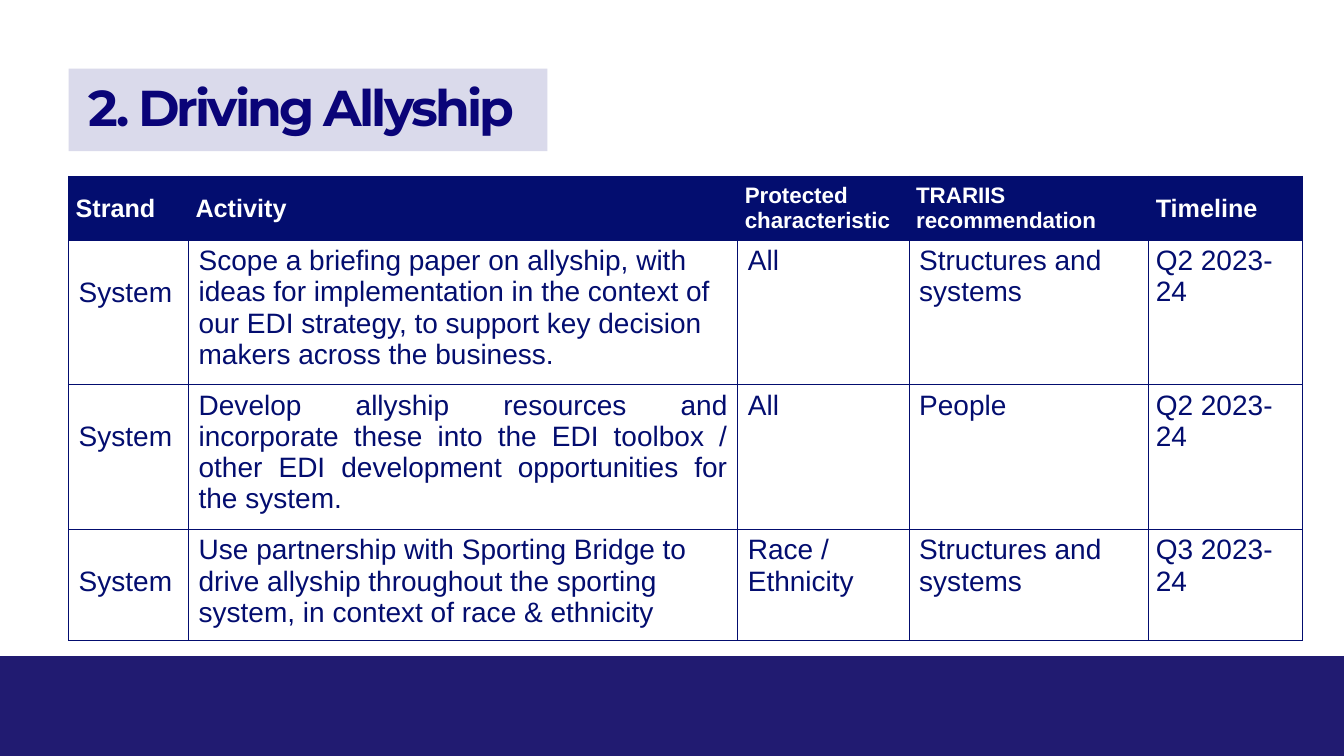
from lxml.etree import SubElement as Sub
from pptx import Presentation
from pptx.dml.color import RGBColor as RGB
from pptx.enum.shapes import MSO_SHAPE as SHAPE
from pptx.enum.text import MSO_ANCHOR as ANCHOR, PP_ALIGN as ALIGN
from pptx.oxml.ns import qn
from pptx.util import Pt

NAVY = RGB(0x03, 0x0D, 0x6F)
INK = RGB(0x0A, 0x04, 0x78)
BAND = RGB(0x21, 0x1B, 0x71)
LILAC = RGB(0xDA, 0xDA, 0xEB)
WHITE = RGB(0xFF, 0xFF, 0xFF)

HEADS = [("Strand", 18), ("Activity", 18), ("Protected characteristic", 16),
         ("TRARIIS recommendation", 16), ("Timeline", 18)]
ROWS = [
    ["System", "Scope a briefing paper on allyship, with ideas for implementation "
     "in the context of our EDI strategy, to support key decision makers "
     "across the business.", "All", "Structures and systems", "Q2 2023-24"],
    ["System", "Develop allyship resources and incorporate these into the EDI "
     "toolbox / other EDI development opportunities for the system.",
     "All", "People", "Q2 2023-24"],
    ["System", "Use partnership with Sporting Bridge to drive allyship throughout "
     "the sporting system, in context of race & ethnicity",
     "Race / Ethnicity", "Structures and systems", "Q3 2023-24"],
]
WIDTHS = [85.7, 392.3, 122.4, 171.2, 109.9]
HEIGHTS = [45.4, 96.6, 96.6, 74.2]


def put(frame, text, size=20, color=NAVY, bold=False, font="Arial",
        align=ALIGN.LEFT, line=None, track=None):
    para = frame.paragraphs[0]
    para.alignment = align
    para.line_spacing = line
    run = para.add_run()
    run.text = text
    run.font.name = font
    run.font.size = Pt(size)
    run.font.bold = bold
    run.font.color.rgb = color
    if track:
        run._r.get_or_add_rPr().set("spc", str(track * 100))


def edge(cell, color):
    """Draw a thin line on all four sides of a cell."""
    props = cell._tc.get_or_add_tcPr()
    for side in ("lnL", "lnR", "lnT", "lnB"):
        ln = Sub(props, qn(f"a:{side}"), w=str(Pt(1)))
        fill = Sub(ln, qn("a:solidFill"))
        Sub(fill, qn("a:srgbClr"), val=str(color))


prs = Presentation()
prs.slide_width, prs.slide_height = Pt(960), Pt(540)
slide = prs.slides.add_slide(prs.slide_layouts[6])

band = slide.shapes.add_shape(SHAPE.RECTANGLE, Pt(0), Pt(468.7), Pt(960), Pt(71.3))
band.shadow.inherit = False
band.fill.solid()
band.fill.fore_color.rgb = BAND
band.line.fill.background()

title = slide.shapes.add_textbox(Pt(49), Pt(49), Pt(342), Pt(59))
title.fill.solid()
title.fill.fore_color.rgb = LILAC
frame = title.text_frame
frame.word_wrap = True
frame.vertical_anchor = ANCHOR.MIDDLE
frame.margin_left = frame.margin_right = Pt(14.4)
put(frame, "2. Driving Allyship", size=36, color=INK, bold=True,
    font="Montserrat", line=0.9, track=-2)

table = slide.shapes.add_table(len(HEIGHTS), len(WIDTHS), Pt(49), Pt(126),
                               Pt(sum(WIDTHS)), Pt(sum(HEIGHTS))).table
table.horz_banding = False
for col, width in zip(table.columns, WIDTHS):
    col.width = Pt(width)
for row, height in zip(table.rows, HEIGHTS):
    row.height = Pt(height)

for c, (text, size) in enumerate(HEADS):
    cell = table.cell(0, c)
    cell.vertical_anchor = ANCHOR.MIDDLE
    put(cell.text_frame, text, size=size, color=WHITE, bold=True)

for r, row in enumerate(ROWS, 1):
    for c, text in enumerate(row):
        cell = table.cell(r, c)
        if c == 0:
            cell.margin_top = Pt(26)
        spread = (r, c) == (2, 1)
        put(cell.text_frame, text, align=ALIGN.JUSTIFY if spread else ALIGN.LEFT)

for r in range(len(HEIGHTS)):
    for c in range(len(WIDTHS)):
        cell = table.cell(r, c)
        if r == 0 or c == len(WIDTHS) - 1:
            cell.margin_left, cell.margin_right = Pt(5), Pt(0.7)
        edge(cell, NAVY)
        cell.fill.solid()
        cell.fill.fore_color.rgb = WHITE if r else NAVY

prs.save("out.pptx")
